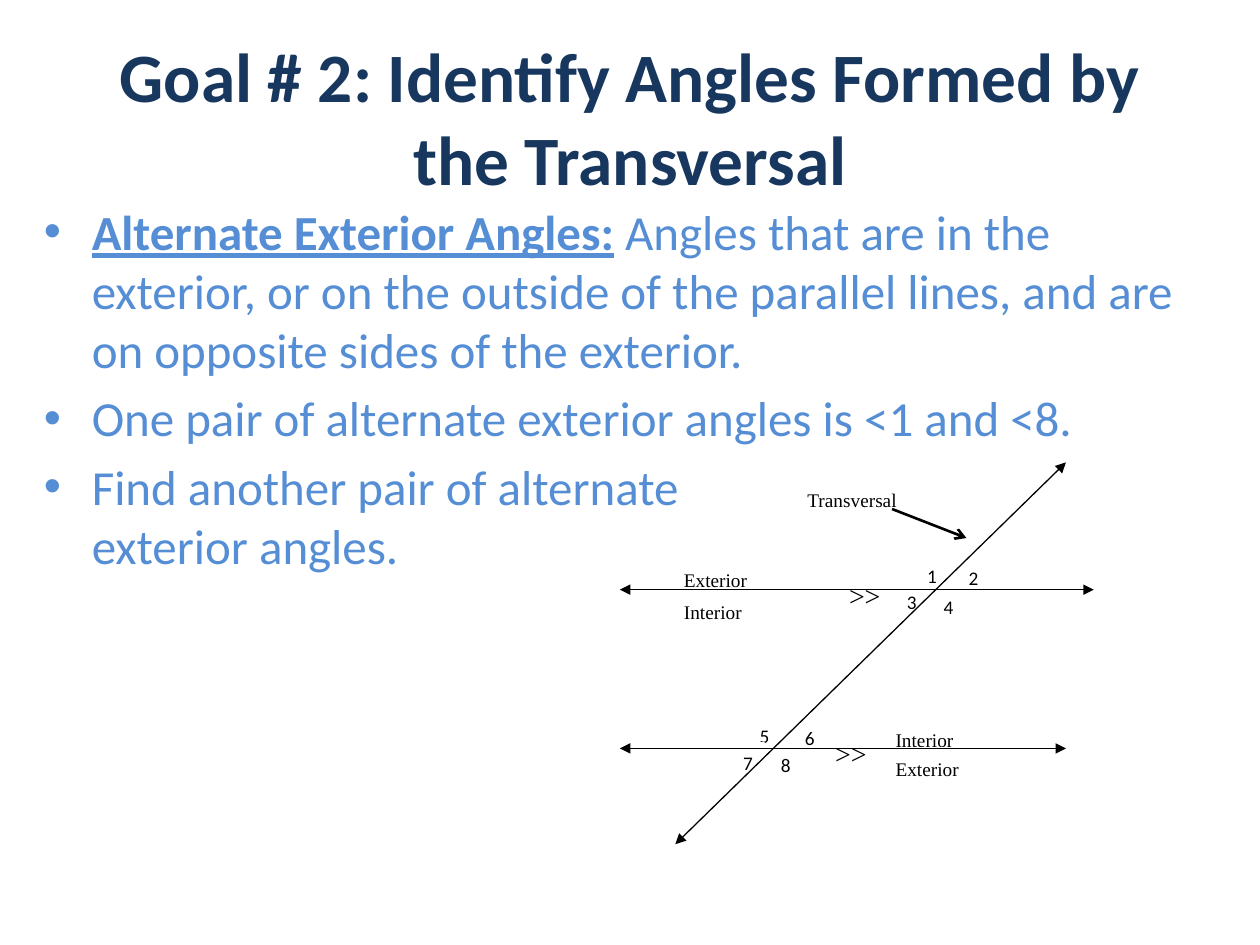
"""Build a slide on alternate exterior angles with a labelled transversal diagram."""
from lxml.etree import SubElement
from pptx import Presentation
from pptx.dml.color import RGBColor
from pptx.enum.shapes import MSO_CONNECTOR, MSO_SHAPE
from pptx.enum.text import MSO_ANCHOR, MSO_AUTO_SIZE, PP_ALIGN
from pptx.oxml.ns import qn
from pptx.util import Inches, Pt

NAVY = RGBColor(0x17, 0x37, 0x5E)
BLUE = RGBColor(0x55, 0x8E, 0xD5)
BLACK = RGBColor(0, 0, 0)
WHITE = RGBColor(0xFF, 0xFF, 0xFF)
SANS, SERIF = "Calibri", "Times New Roman"

TITLE = "Goal # 2: Identify Angles Formed by the Transversal"
BULLETS = [
    [("Alternate Exterior Angles:", True),
     (" Angles that are in the exterior, or on the outside of the parallel lines, "
      "and are on opposite sides of the exterior.", False)],
    [("One pair of alternate exterior angles is <1 and <8.", False)],
    [("Find another pair of alternate\vexterior angles.", False)],
]

REGION, MARK, ANGLE = (1.36, 0.32), (0.54, 0.32), (0.27, 0.27)
LABEL_STYLES = {REGION: (SERIF, 11), MARK: (SERIF, 16), ANGLE: (SANS, 11)}
LABELS = [
    ("Transversal", 6.31, 3.8, REGION),
    (">>\u00a0", 6.53, 5.76, MARK),
    (">>\u00a0", 6.64, 4.5, MARK),
    ("1", 7.26, 4.4, ANGLE),
    ("2", 7.59, 4.42, ANGLE),
    ("4", 7.39, 4.65, ANGLE),
    ("6", 6.29, 5.69, ANGLE),
    ("8", 6.1, 5.9, ANGLE),
    ("5", 5.93, 5.67, ANGLE),
    ("7", 5.8, 5.89, ANGLE),
    ("3", 7.1, 4.61, ANGLE),
    ("Exterior", 5.33, 4.43, REGION),
    ("Interior", 5.33, 4.69, REGION),
    ("Interior", 7.01, 5.7, REGION),
    ("Exterior", 7.01, 5.93, REGION),
]
BOTH_ENDS = {"headEnd": "triangle", "tailEnd": "triangle"}
LINES = [
    ((7.08, 4.04), (7.67, 4.27), 1.5, {"tailEnd": "arrow"}),
    ((5.36, 6.7), (8.46, 3.67), 0.75, BOTH_ENDS),
    ((4.92, 4.68), (8.68, 4.68), 0.75, BOTH_ENDS),
    ((4.92, 5.94), (8.46, 5.94), 0.75, BOTH_ENDS),
]


def style_font(font, name, size, color, bold=False):
    font.name, font.size, font.bold = name, Pt(size), bold
    font.color.rgb = color


def add_title(slide):
    title = slide.shapes.title
    title.left, title.top, title.width, title.height = map(Inches, (0.5, 0.3, 9, 1.25))
    frame = title.text_frame
    frame.text = TITLE
    frame.auto_size = MSO_AUTO_SIZE.NONE
    frame.vertical_anchor = MSO_ANCHOR.MIDDLE
    frame.paragraphs[0].alignment = PP_ALIGN.CENTER
    style_font(frame.paragraphs[0].runs[0].font, SANS, 39.6, NAVY, True)


def add_bullets(slide):
    frame = slide.shapes.add_textbox(*map(Inches, (0.25, 1.55, 9.25, 5.28))).text_frame
    frame.word_wrap = True
    for index, parts in enumerate(BULLETS):
        bullet = frame.add_paragraph() if index else frame.paragraphs[0]
        bullet.text = "".join(text for text, _ in parts) if len(parts) == 1 else ""
        if len(parts) > 1:
            for text, _ in parts:
                bullet.add_run().text = text
        term = parts[0][1]
        for position, run in enumerate(bullet.runs):
            emphasised = term and position == 0
            style_font(run.font, SANS, 28, BLUE, emphasised)
            run.font.underline = emphasised
        bullet.space_before = Pt(5.6)
        properties = bullet._p.get_or_add_pPr()
        properties.set("marL", str(Inches(0.38)))
        properties.set("indent", str(Inches(-0.38)))
        SubElement(properties, qn("a:buFont"), typeface="Arial")
        SubElement(properties, qn("a:buChar"), char="•")


def add_label(slide, text, left, top, size):
    label = slide.shapes.add_shape(MSO_SHAPE.RECTANGLE, *map(Inches, (left, top, *size)))
    label.shadow.inherit = False
    label.fill.solid()
    label.fill.fore_color.rgb = WHITE
    label.line.fill.background()
    frame = label.text_frame
    frame.text = text
    frame.vertical_anchor = MSO_ANCHOR.TOP
    paragraph = frame.paragraphs[0]
    paragraph.alignment = PP_ALIGN.LEFT
    paragraph.line_spacing = 1.15
    paragraph.space_after = Pt(10)
    style_font(paragraph.runs[0].font, *LABEL_STYLES[size], BLACK)


def add_line(slide, start, end, width, arrowheads):
    line = slide.shapes.add_connector(MSO_CONNECTOR.STRAIGHT, *map(Inches, start + end))
    line.line.color.rgb = BLACK
    line.line.width = Pt(width)
    outline = line.line._get_or_add_ln()
    for tag, kind in arrowheads.items():
        SubElement(outline, qn(f"a:{tag}"), type=kind)
    SubElement(line._element.spPr, qn("a:effectLst"))


def main():
    deck = Presentation()
    deck.slide_width, deck.slide_height = Inches(10), Inches(7.5)
    slide = deck.slides.add_slide(deck.slide_layouts[5])
    add_title(slide)
    add_bullets(slide)
    for label in LABELS:
        add_label(slide, *label)
    for line in LINES:
        add_line(slide, *line)
    deck.save("out.pptx")


if __name__ == "__main__":
    main()
